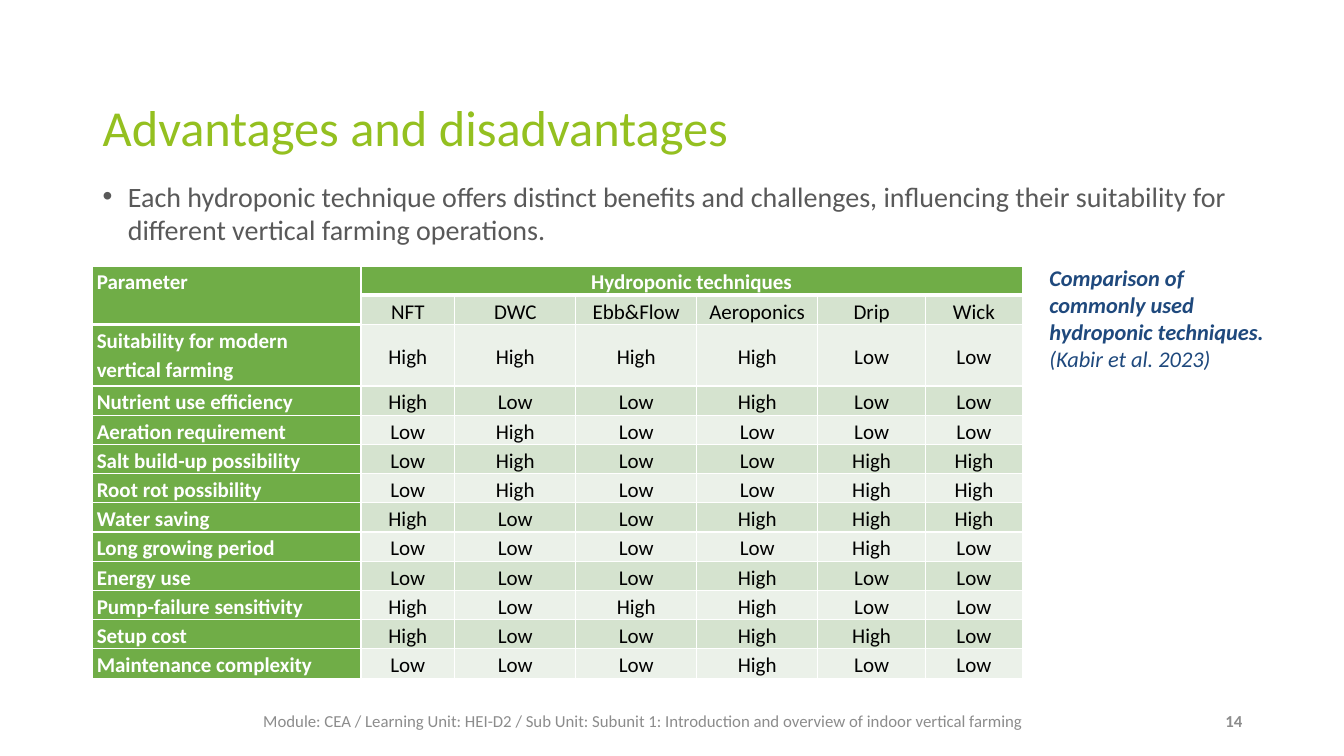
from lxml import etree
from pptx import Presentation, util as u
from pptx.dml.color import RGBColor
from pptx.enum import text
from pptx.oxml.ns import qn

GREEN, BAND, PALE = "70AD47", "D5E3CF", "EBF1E9"
WHITE, BLACK, GREY, NAVY = "FFFFFF", "000000", "8C8C8C", "1F497D"
LEFT, CENTER, RIGHT = text.PP_ALIGN.LEFT, text.PP_ALIGN.CENTER, text.PP_ALIGN.RIGHT
TOP, MIDDLE = text.MSO_ANCHOR.TOP, text.MSO_ANCHOR.MIDDLE


def rgb(value):
    return RGBColor.from_string(value)


class SlideBuilder:
    font = "Calibri"

    def __init__(self, prs):
        self.s = prs.slides.add_slide(prs.slide_layouts[6])

    def run(self, p, words, size, color, bold=False, italic=False):
        r = p.add_run()
        r.text = words
        f = r.font
        f.name, f.size, f.bold, f.italic = self.font, u.Pt(size), bold, italic
        f.color.rgb = rgb(color)

    def bullet(self, p, indent):
        pPr = p._p.get_or_add_pPr()
        pPr.set("marL", str(u.Inches(indent)))
        pPr.set("indent", str(-u.Inches(indent)))
        etree.SubElement(pPr, qn("a:buFont"), typeface="Arial")
        etree.SubElement(pPr, qn("a:buChar"), char="•")

    def text(self, box, paragraphs, size, color, align=LEFT, anchor=TOP,
             spacing=None, bullet=False):
        """Each paragraph is a list of (words, bold, italic) runs."""
        tf = self.s.shapes.add_textbox(*map(u.Inches, box)).text_frame
        tf.word_wrap, tf.vertical_anchor = True, anchor
        for i, runs in enumerate(paragraphs):
            p = tf.add_paragraph() if i else tf.paragraphs[0]
            p.alignment = align
            if spacing:
                p.line_spacing = spacing
            if bullet:
                self.bullet(p, 0.25)
            for words, bold, italic in runs:
                self.run(p, words, size, color, bold, italic)

    def borders(self, cell, bottom):
        tcPr = cell._tc.get_or_add_tcPr()
        for i, side in enumerate("LRTB"):
            width = u.Pt(bottom if side == "B" else 1)
            ln = etree.Element(qn("a:ln" + side), w=str(width))
            fill = etree.SubElement(ln, qn("a:solidFill"))
            etree.SubElement(fill, qn("a:srgbClr"), val=WHITE)
            tcPr.insert(i, ln)

    def cell(self, cell, words, fill, color, bold, align, anchor, bottom=1):
        cell.margin_left = cell.margin_right = u.Inches(0.04)
        cell.margin_top = cell.margin_bottom = 0
        cell.vertical_anchor = anchor
        cell.fill.solid()
        cell.fill.fore_color.rgb = rgb(fill)
        self.borders(cell, bottom)
        p = cell.text_frame.paragraphs[0]
        p.alignment, p.line_spacing = align, 1.15
        if words:
            self.run(p, words, 15, color, bold)

    def table(self, left, top, widths, heights, rows):
        size = [left, top, sum(widths), sum(heights)]
        t = self.s.shapes.add_table(len(rows), len(widths), *map(u.Inches, size)).table
        t.first_row = t.horz_banding = False
        for col, width in zip(t.columns, widths):
            col.width = u.Inches(width)
        for row, height in zip(t.rows, heights):
            row.height = u.Inches(height)
        for i, row in enumerate(rows):
            for j, words in enumerate(row):
                header = i == 0 or j == 0
                self.cell(t.cell(i, j), words,
                          GREEN if header else BAND if i % 2 else PALE,
                          WHITE if header else BLACK, header,
                          CENTER if j else LEFT,
                          MIDDLE if j and i in (1, 2) else TOP,
                          bottom=1 if i else 3)
        t.cell(0, 0).merge(t.cell(1, 0))
        t.cell(0, 1).merge(t.cell(0, len(widths) - 1))


def main():
    prs = Presentation()
    prs.slide_width, prs.slide_height = u.Inches(13.33), u.Inches(7.5)
    sb = SlideBuilder(prs)

    # Title and introduction
    sb.text((0.92, 0.74, 11.5, 1.1), [[("Advantages and disadvantages", False, False)]],
            36, "94C020", anchor=MIDDLE, spacing=0.9)
    intro = ("Each hydroponic technique offers distinct benefits and challenges, "
             "influencing their suitability for different vertical farming operations.")
    sb.text((0.92, 1.73, 11.5, 5.31), [[(intro, False, False)]], 20, "595959", bullet=True)

    # Footer and slide number
    footer = ("Module: CEA / Learning Unit: HEI-D2 / Sub Unit: Subunit 1: "
              "Introduction and overview of indoor vertical farming")
    sb.text((0.92, 6.82, 10.92, 0.66), [[(footer, False, False)]], 12, GREY, CENTER, MIDDLE)
    sb.text((11.92, 6.95, 0.5, 0.4), [[("14", True, False)]], 12, GREY, RIGHT, MIDDLE)

    # Comparison table: one letter per technique, H for High and L for Low
    techniques = ["NFT", "DWC", "Ebb&Flow", "Aeroponics", "Drip", "Wick"]
    ratings = [
        ("Suitability for modern vertical farming", "HHHHLL"),
        ("Nutrient use efficiency", "HLLHLL"),
        ("Aeration requirement", "LHLLLL"),
        ("Salt build-up possibility", "LHLLHH"),
        ("Root rot possibility", "LHLLHH"),
        ("Water saving", "HLLHHH"),
        ("Long growing period", "LLLLHL"),
        ("Energy use", "LLLHLL"),
        ("Pump-failure sensitivity", "HLHHLL"),
        ("Setup cost", "HLLHHL"),
        ("Maintenance complexity", "LLLHLL"),
    ]
    level = {"H": "High", "L": "Low"}
    rows = [["Parameter", "Hydroponic techniques"] + [""] * 5, [""] + techniques]
    rows += [[name] + [level[c] for c in marks] for name, marks in ratings]
    heights = [0.29] * len(rows)
    heights[2] = 0.61
    sb.table(0.92, 2.64, [2.66, 0.93, 1.2, 1.2, 1.2, 1.07, 0.96], heights, rows)

    # Table caption
    sb.text((10.31, 2.57, 2.45, 1.18),
            [[("Comparison of commonly used hydroponic techniques.", True, True)],
             [("(Kabir et al. 2023)", False, True)]], 16, NAVY)

    prs.save("out.pptx")


if __name__ == "__main__":
    main()
